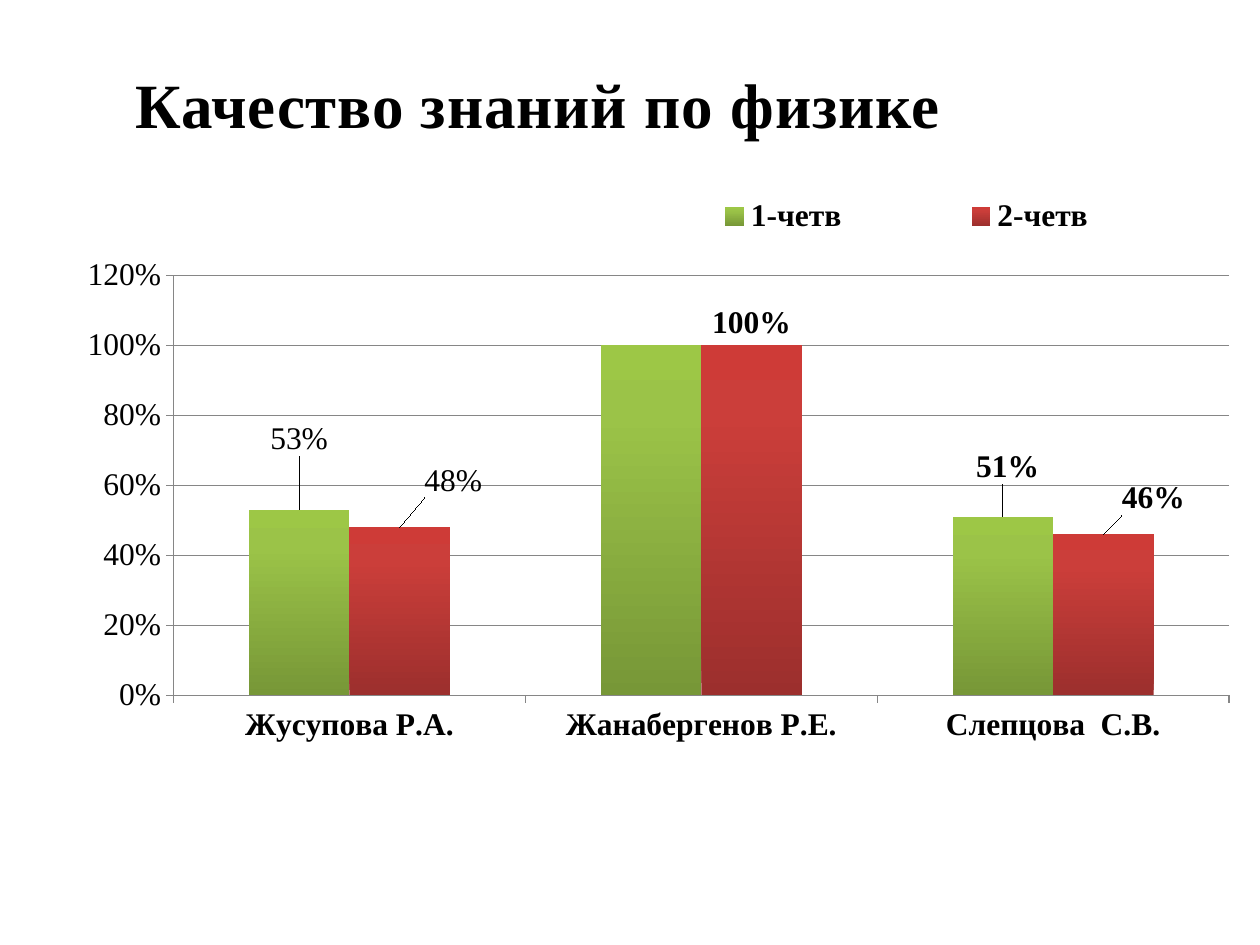
"""Build a slide with a clustered column chart of physics results by teacher."""
from lxml import etree
from pptx import Presentation
from pptx import util as u
from pptx.chart.data import CategoryChartData
from pptx.dml.color import RGBColor
from pptx.enum import chart as c
from pptx.enum import text
from pptx.oxml import parse_xml
from pptx.oxml.ns import nsdecls, qn

TITLE = "Качество знаний по физике"
FONT = "Times New Roman"
COLORS = {"text": "000000", "axis": "868686"}
TEACHERS = ["Жусупова Р.А.", "Жанабергенов Р.Е.", "Слепцова  С.В."]
SERIES = [
    {"name": "1-четв", "values": (0.53, 1, 0.51),
     "gradient": ((0, "779737"), (80, "9BC348"), (100, "9DC746")),
     "plain": {0: "53%"}, "hidden": [1],
     "offsets": {0: (0, -0.07), 2: (0.004, -0.04)}},
    {"name": "2-четв", "values": (0.48, 1, 0.46),
     "gradient": ((0, "9C2F2D"), (80, "CB3E3A"), (100, "CE3B37")),
     "plain": {0: "48%"}, "hidden": [],
     "offsets": {0: (0.045, -0.035), 2: (0.042, -0.02)}},
]
PLOT_BOX = (0.113, 0.154, 0.887, 0.601)
LEGEND_BOX = (0.476, 0.02, 0.506, 0.1)


def style_font(font, size, bold):
    font.name = FONT
    font.size = u.Pt(size)
    font.bold = bold
    font.color.rgb = RGBColor.from_string(COLORS["text"])


def set_layout(parent, index, values, box=True, inner=False):
    for old in parent.findall(qn("c:layout")):
        parent.remove(old)
    layout = parse_xml(f"<c:layout {nsdecls('c')}><c:manualLayout/></c:layout>")
    entries = [("layoutTarget", "inner")] if inner else []
    if box:
        entries += [("xMode", "edge"), ("yMode", "edge")]
    entries += zip("xywh", values)
    for tag, value in entries:
        etree.SubElement(layout[0], qn(f"c:{tag}")).set("val", str(value))
    parent.insert(index, layout)


def fill_gradient(series, stops):
    fill = series.format.fill
    fill.gradient()
    fill.gradient_angle = 90
    stop_list = series.format.element.find(".//" + qn("a:gsLst")) if hasattr(
        series.format, "element") else series._element.find(".//" + qn("a:gsLst"))
    for old in list(stop_list):
        stop_list.remove(old)
    for position, color in stops:
        stop = etree.SubElement(stop_list, qn("a:gs"), pos=str(position * 1000))
        etree.SubElement(stop, qn("a:srgbClr"), val=color)


def label_series(series, item):
    labels = series.data_labels
    labels.show_value = True
    labels.number_format = "0%"
    labels.number_format_is_linked = False
    labels.position = c.XL_LABEL_POSITION.OUTSIDE_END
    style_font(labels.font, 18, True)
    for index in sorted({*item["offsets"], *item["hidden"]}):
        label = series.points[index].data_label
        if index in item["plain"]:
            run = label.text_frame.paragraphs[0].add_run()
            run.text = item["plain"][index]
            style_font(run.font, 18, False)
        else:
            style_font(label.font, 18, True)
        label.position = c.XL_LABEL_POSITION.OUTSIDE_END
        element = series._element.xpath(f"c:dLbls/c:dLbl[c:idx/@val='{index}']")[0]
        if index in item["hidden"]:
            for child in list(element)[1:]:
                element.remove(child)
            etree.SubElement(element, qn("c:delete")).set("val", "1")
        else:
            set_layout(element, 1, item["offsets"][index], box=False)


def add_results_chart(slide):
    data = CategoryChartData(number_format="0%")
    data.categories = TEACHERS
    for item in SERIES:
        data.add_series(item["name"], item["values"])
    frame = slide.shapes.add_chart(
        c.XL_CHART_TYPE.COLUMN_CLUSTERED, u.Inches(0.31), u.Inches(1.33),
        u.Inches(9.45), u.Inches(5.55), data)
    chart = frame.chart
    chart.has_title = False
    chart.font.name = "Calibri"
    chart.font.size = u.Pt(18)
    plot = chart.plots[0]
    plot.gap_width = 150
    plot.overlap = 0
    plot.vary_by_categories = False
    for series, item in zip(plot.series, SERIES):
        series.invert_if_negative = False
        fill_gradient(series, item["gradient"])
        label_series(series, item)

    gray = RGBColor.from_string(COLORS["axis"])
    values = chart.value_axis
    for axis, bold in ((chart.category_axis, True), (values, False)):
        axis.major_tick_mark = c.XL_TICK_MARK.OUTSIDE
        axis.minor_tick_mark = c.XL_TICK_MARK.NONE
        axis.format.line.color.rgb = gray
        style_font(axis.tick_labels.font, 18, bold)
    values.minimum_scale, values.maximum_scale, values.major_unit = 0, 1.2, 0.2
    values.tick_labels.number_format = "0%"
    values.tick_labels.number_format_is_linked = False
    values.has_major_gridlines = True
    values.major_gridlines.format.line.color.rgb = gray

    chart.has_legend = True
    chart.legend.position = c.XL_LEGEND_POSITION.RIGHT
    chart.legend.include_in_layout = False
    style_font(chart.legend.font, 18, True)
    set_layout(chart.element.xpath("c:chart/c:legend")[0], 1, LEGEND_BOX)
    set_layout(chart.element.xpath("c:chart/c:plotArea")[0], 0, PLOT_BOX, inner=True)


def add_title(slide):
    shape = slide.shapes.add_textbox(
        u.Inches(0.94), u.Inches(0.47), u.Inches(6.66), u.Inches(0.71))
    frame = shape.text_frame
    frame.word_wrap = False
    frame.auto_size = text.MSO_AUTO_SIZE.SHAPE_TO_FIT_TEXT
    paragraph = frame.paragraphs[0]
    paragraph.alignment = text.PP_ALIGN.CENTER
    run = paragraph.add_run()
    run.text = TITLE
    style_font(run.font, 36, True)
    run._r.get_or_add_rPr().set("spc", "50")


def main():
    presentation = Presentation()
    presentation.slide_width = u.Inches(10)
    presentation.slide_height = u.Inches(7.5)
    slide = presentation.slides.add_slide(presentation.slide_layouts[6])
    add_results_chart(slide)
    add_title(slide)
    presentation.save("out.pptx")


if __name__ == "__main__":
    main()
